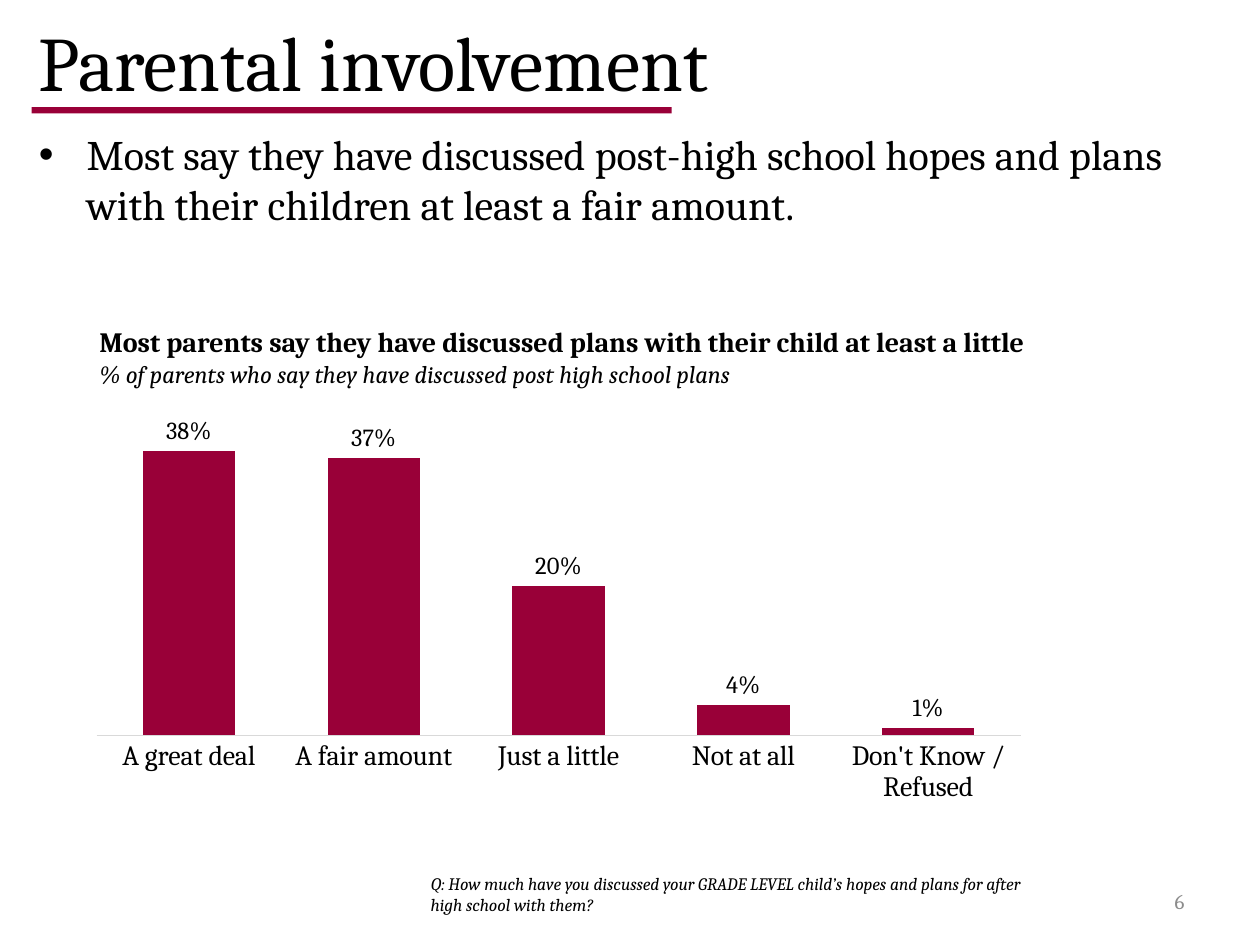
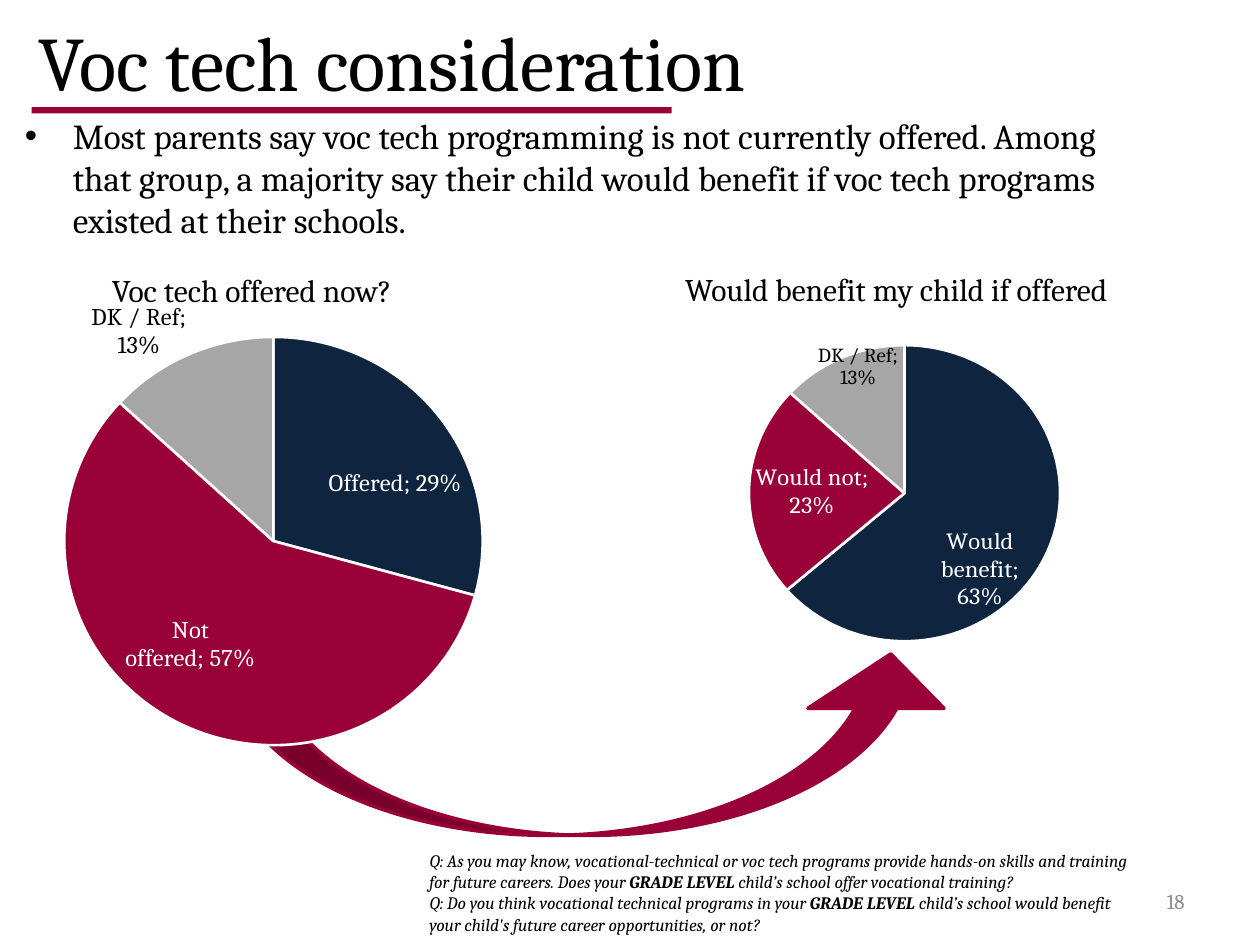
from dataclasses import dataclass

from lxml import etree
from pptx import Presentation
from pptx.chart.data import CategoryChartData
from pptx.dml.color import RGBColor
from pptx.enum.chart import XL_CHART_TYPE, XL_LABEL_POSITION, XL_TICK_MARK
from pptx.enum.shapes import MSO_SHAPE
from pptx.enum.text import MSO_ANCHOR, PP_ALIGN
from pptx.oxml.ns import qn
from pptx.util import Inches, Pt

BAR, PIE = XL_CHART_TYPE.COLUMN_CLUSTERED, XL_CHART_TYPE.PIE
MID, OUT = XL_LABEL_POSITION.CENTER, XL_LABEL_POSITION.OUTSIDE_END
NO_TICK = XL_TICK_MARK.NONE
RECT, ARROW = MSO_SHAPE.RECTANGLE, MSO_SHAPE.CURVED_UP_ARROW
TOP, MIDDLE = MSO_ANCHOR.TOP, MSO_ANCHOR.MIDDLE
LEFT, RIGHT = PP_ALIGN.LEFT, PP_ALIGN.RIGHT


@dataclass(frozen=True)
class Theme:
    font: str = "Cambria"
    ink: str = "000000"
    paper: str = "FFFFFF"
    red: str = "990038"
    navy: str = "0F243E"
    gray: str = "A6A6A6"
    axis: str = "D9D9D9"
    faint: str = "8C8C8C"
    title: int = 44
    lead: int = 24
    body: int = 20
    head: int = 18
    sub: int = 16
    label: int = 14
    small: int = 12
    note: int = 10


T = Theme()
PERCENT = "###0%"
BOLD = {"bold": True}

TALK = {
    "title": "Parental involvement",
    "page": "6",
    "lead": "Most say they have discussed post-high school hopes and plans "
            "with their children at least a fair amount.",
    "head": [
        [("Most parents say they have discussed plans with their child at least a little",
          {"bold": True, "size": T.sub})],
        [("% of parents who say they have discussed post high school plans",
          {"italic": True})],
    ],
    "data": [("A great deal", 0.38), ("A fair amount", 0.37), ("Just a little", 0.2),
             ("Not at all", 0.04), ("Don't Know / Refused", 0.01)],
    "note": ["Q: How much have you discussed your GRADE LEVEL child’s hopes and plans "
             "for after high school with them?"],
}

TECH = {
    "title": "Voc tech consideration",
    "page": "18",
    "lead": "Most parents say voc tech programming is not currently offered. Among that "
            "group, a majority say their child would benefit if voc tech programs existed "
            "at their schools.",
    "pies": [
        {
            "head": "Voc tech offered now?",
            "place": (0.79, 2.1, 3.58, 0.4),
            "box": (-0.41, 2.31, 5.11, 4.03),
            "data": [("Offered", 0.29), ("Not\noffered", 0.57), ("DK / Ref", 0.13)],
            "labels": [(MID, 0.06, 0.01, T.paper, T.label),
                       (MID, -0.05, 0.03, T.paper, T.label),
                       (OUT, 0, 0.02, T.ink, T.label)],
        },
        {
            "head": "Would benefit my child if offered",
            "place": (5.34, 2.09, 4.16, 0.4),
            "box": (5.21, 2.43, 3.9, 2.94),
            "data": [("Would benefit", 0.63), ("Would not", 0.23), ("DK / Ref", 0.13)],
            "labels": [(MID, 0.01, 0.13, T.paper, T.label),
                       (MID, -0.03, 0, T.paper, T.label),
                       (OUT, 0.12, 0.11, T.ink, T.small)],
        },
    ],
    "note": [
        [("Q: As you may know, vocational-technical or voc tech programs provide hands-on "
          "skills and training for future careers. Does your ", {}),
         ("GRADE LEVEL ", BOLD),
         ("child’s school offer vocational training?", {})],
        [("Q: Do you think vocational technical programs in your ", {}),
         ("GRADE LEVEL", BOLD),
         (" child’s school would benefit your child's future career opportunities, or not?",
          {})],
    ],
}


def rgb(code):
    return RGBColor.from_string(code)


def style(font, size, color, bold=False, italic=False):
    font.name, font.size = T.font, Pt(size)
    font.bold, font.italic = bold, italic
    font.color.rgb = rgb(color)


def text(slide, box, lines, size=T.label, color=T.ink, bold=False, italic=False,
         align=LEFT, anchor=TOP, bullet=False):
    frame = slide.shapes.add_textbox(*map(Inches, box)).text_frame
    frame.word_wrap = True
    frame.vertical_anchor = anchor
    base = {"size": size, "color": color, "bold": bold, "italic": italic}
    for i, line in enumerate(lines):
        para = frame.add_paragraph() if i else frame.paragraphs[0]
        para.alignment = align
        if bullet:
            props = para._p.get_or_add_pPr()
            props.set("marL", str(Inches(0.38)))
            props.set("indent", str(-Inches(0.38)))
            etree.SubElement(props, qn("a:buFont")).set("typeface", "Arial")
            etree.SubElement(props, qn("a:buChar")).set("char", "•")
        for words, extra in [(line, {})] if isinstance(line, str) else line:
            run = para.add_run()
            run.text = words
            style(run.font, **{**base, **extra})


def shape(slide, kind, box, line=None):
    item = slide.shapes.add_shape(kind, *map(Inches, box))
    item.shadow.inherit = False
    item.fill.solid()
    item.fill.fore_color.rgb = rgb(T.red)
    if line:
        item.line.color.rgb = rgb(T.red)
        item.line.width = Pt(line)
    else:
        item.line.fill.background()
    return item


def layout(parent, at, **parts):
    for old in parent.findall(qn("c:layout")):
        parent.remove(old)
    node = etree.Element(qn("c:layout"))
    parent.insert(at, node)
    manual = etree.SubElement(node, qn("c:manualLayout"))
    for name, val in parts.items():
        etree.SubElement(manual, qn("c:" + name)).set("val", str(val))


def graph(slide, kind, box, rows, plot):
    data = CategoryChartData(number_format=PERCENT)
    data.categories = [name for name, _ in rows]
    data.add_series("Series 1", [val for _, val in rows])
    chart = slide.shapes.add_chart(kind, *map(Inches, box), data).chart
    chart.has_title = chart.has_legend = False
    style(chart.font, T.label, T.ink)
    x, y, w, h = plot
    layout(chart._chartSpace.chart.plotArea, 0, layoutTarget="inner", xMode="edge",
           yMode="edge", x=x, y=y, w=w, h=h)
    return chart


def bars(slide, rows):
    chart = graph(slide, BAR, (0.69, 3.22, 7.64, 3.4), rows, (0.01, 0.07, 0.96, 0.7))
    plot = chart.plots[0]
    plot.gap_width, plot.overlap = 100, -27
    plot.vary_by_categories = False
    fill = plot.series[0].format.fill
    fill.solid()
    fill.fore_color.rgb = rgb(T.red)
    marks = plot.series[0].data_labels
    marks.show_value = True
    marks.position = OUT
    marks.number_format, marks.number_format_is_linked = PERCENT, False
    style(marks.font, T.label, T.ink)
    vals, cats = chart.value_axis, chart.category_axis
    vals.minimum_scale, vals.maximum_scale = 0, 0.4
    vals.has_major_gridlines = vals.visible = False
    cats.major_tick_mark = cats.minor_tick_mark = NO_TICK
    cats.format.line.color.rgb = rgb(T.axis)
    cats.format.line.width = Pt(0.75)
    style(cats.tick_labels.font, T.sub, T.ink)


def pie(slide, part):
    chart = graph(slide, PIE, part["box"], part["data"], (0.18, 0.06, 0.65, 0.84))
    plot = chart.plots[0]
    plot.vary_by_categories = True
    row = plot.series[0]
    marks = row.data_labels
    marks.show_value = marks.show_category_name = True
    marks.number_format, marks.number_format_is_linked = PERCENT, False
    style(marks.font, T.label, T.paper)
    for lead in row._element.iter(qn("c:showLeaderLines")):
        lead.set("val", "0")
    colors = (T.navy, T.red, T.gray)
    for i, (color, (spot, x, y, ink, size)) in enumerate(zip(colors, part["labels"])):
        point = row.points[i]
        point.format.fill.solid()
        point.format.fill.fore_color.rgb = rgb(color)
        point.format.line.color.rgb = rgb(T.paper)
        point.format.line.width = Pt(1.5)
        style(point.data_label.font, size, ink)
        point.data_label.position = spot
        node = row._element.findall(".//" + qn("c:dLbl"))[i]
        layout(node, 1, x=x, y=y)
        node.find(qn("c:showCatName")).set("val", "1")
        etree.SubElement(node, qn("c:separator")).text = "; "


def start(deck, part):
    slide = deck.slides.add_slide(deck.slide_layouts[6])
    shape(slide, RECT, (0.25, 0.85, 5.08, 0.05))
    text(slide, (0.21, 0, 9, 0.97), [part["title"]], size=T.title, anchor=MIDDLE)
    text(slide, (7.17, 6.95, 2.33, 0.4), [part["page"]], size=T.small, color=T.faint,
         align=RIGHT, anchor=MIDDLE)
    return slide


def talk(deck):
    slide = start(deck, TALK)
    text(slide, (0.21, 0.97, 9.43, 1.37), [TALK["lead"]], size=T.lead, bullet=True)
    text(slide, (3.32, 6.88, 5.1, 0.44), TALK["note"], size=T.note, italic=True)
    text(slide, (0.69, 2.53, 8.19, 0.61), TALK["head"])
    bars(slide, TALK["data"])


def tech(deck):
    slide = start(deck, TECH)
    arrow = shape(slide, ARROW, (1.8, 5.19, 5.81, 1.44), line=2)
    for i, val in enumerate((0.23, 0.75, 0.3)):
        arrow.adjustments[i] = val
    text(slide, (0.1, 0.86, 9.1, 1.2), [TECH["lead"]], size=T.body, bullet=True)
    for part in TECH["pies"]:
        pie(slide, part)
        text(slide, part["place"], [part["head"]], size=T.head)
    text(slide, (3.31, 6.7, 5.8, 0.78), TECH["note"], size=T.note, italic=True)


def main():
    deck = Presentation()
    deck.slide_width, deck.slide_height = Inches(10), Inches(7.5)
    talk(deck)
    tech(deck)
    deck.save("out.pptx")


if __name__ == "__main__":
    main()
